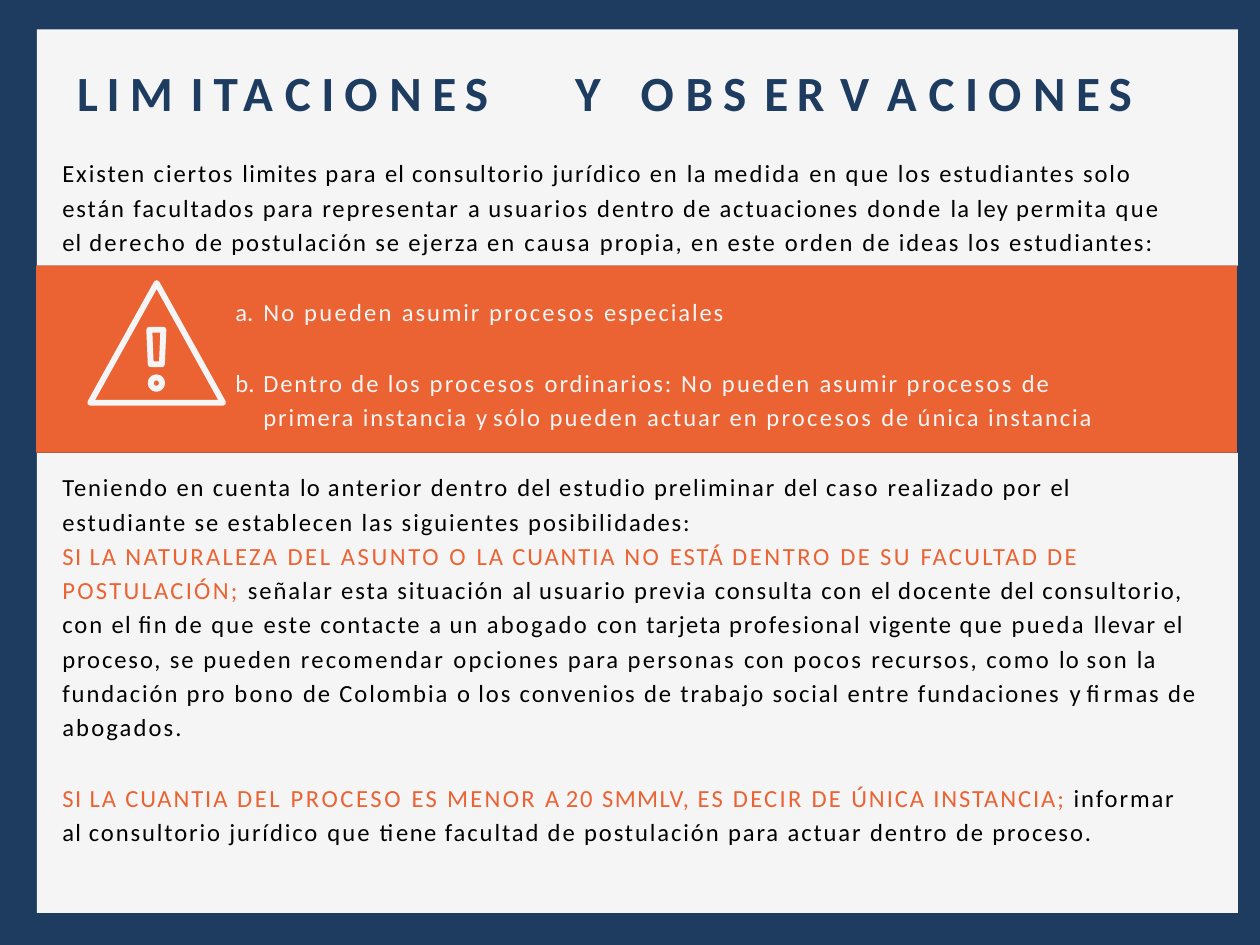
from itertools import groupby

from lxml import etree
from pptx import Presentation
from pptx.dml.color import RGBColor
from pptx.enum.shapes import MSO_SHAPE as SHAPE
from pptx.oxml.ns import qn
from pptx.util import Pt

NAVY, PAPER, ORANGE, BLACK = "1E3B60", "F5F5F5", "EB6333", "000000"


def color(hex_):
    return RGBColor.from_string(hex_)


def add_text(p, text, size=15, hex_=BLACK, bold=False, spc=1.1):
    r = p.add_run()
    r.text = text
    r.font.name = "Calibri"
    r.font.size = Pt(size)
    r.font.bold = bold
    r.font.color.rgb = color(hex_)
    r._r.get_or_add_rPr().set("spc", str(round(spc * 100)))


prs = Presentation()
prs.slide_width, prs.slide_height = Pt(768), Pt(576)
slide = prs.slides.add_slide(prs.slide_layouts[6])
shapes = slide.shapes

# Navy background, light panels and orange band
slide.background.fill.solid()
slide.background.fill.fore_color.rgb = color(NAVY)
for x, y, h, fill in [(22.5, 18, 144, PAPER), (22.5, 276, 280.5, PAPER),
                      (22, 162, 114, ORANGE)]:
    sp = shapes.add_shape(SHAPE.RECTANGLE, Pt(x), Pt(y), Pt(732), Pt(h))
    sp.shadow.inherit = False
    sp.fill.solid()
    sp.fill.fore_color.rgb = color(fill)
    sp.line.fill.background()

# Warning sign: triangle, dot and bar of the exclamation mark
triangle = shapes.add_shape(SHAPE.ISOSCELES_TRIANGLE, Pt(55), Pt(172.5), Pt(81), Pt(73))
dot = shapes.add_shape(SHAPE.OVAL, Pt(91.8), Pt(230), Pt(7), Pt(7))
fb = shapes.build_freeform(Pt(91), Pt(201), scale=1.0)
fb.add_line_segments([(Pt(99.6), Pt(201)), (Pt(98.7), Pt(222)), (Pt(91.9), Pt(222))])
bar = fb.convert_to_shape()
for sp in (triangle, dot, bar):
    sp.shadow.inherit = False
    sp.fill.background()
    sp.line.color.rgb = color(PAPER)
    sp.line.width = Pt(3.6)
    etree.SubElement(sp.line._get_or_add_ln(), qn("a:round"))

# Text boxes
frames = []
for x, y, w, h in [(47, 38, 681, 36), (37.5, 93.6, 708, 421)]:
    tf = shapes.add_textbox(Pt(x), Pt(y), Pt(w), Pt(h)).text_frame
    tf.word_wrap = True
    tf.margin_left = tf.margin_right = tf.margin_top = tf.margin_bottom = 0
    frames.append(tf)
title, body = frames

# Title: spaced letters, each with its own tracking
TRACKING = {"L": -1.4, "I": -0.7, "M": 2, "T": -3.6, "A": 0.2, "C": -0.4, "O": 0.2,
            "N": -0.4, "E": -1.6, "S": 2.1, "Y": 0.9, "B": -0.8, "R": 1.3, "V": 2}
p = title.paragraphs[0]
pPr = p._p.get_or_add_pPr()
tabs = etree.SubElement(pPr, qn("a:tabLst"))
for pos in (303.5, 343.5):
    etree.SubElement(tabs, qn("a:tab"), pos=str(Pt(pos)), algn="l")
words = "LIMITACIONES Y OBSERVACIONES".split()
for i, word in enumerate(words):
    for j, letter in enumerate(word):
        last = j == len(word) - 1
        gap = " " if not last else "\t" if i < len(words) - 1 else ""
        add_text(p, letter + gap, size=30, hex_=NAVY, bold=True, spc=TRACKING[letter])

# Tracking of the body words that differ from the usual 1.15
WORD_SPC = {w: spc for spc, group in {
    0.1: "y",
    0.3: "A",
    0.7: "el la lo al ley fin",
    0.85: "limites a o del tarjeta vigente llevar tiene SI SMMLV,",
    1.3: "medida que usuarios orden No opciones abogados.",
    1.4: "donde derecho causa pueden procesos caso abogado pueda recomendar personas "
         "pocos como son bono NATURALEZA DE FACULTAD POSTULACIÓN; ES MENOR DECIR",
    1.6: "DEL ASUNTO O NO DENTRO SU PROCESO",
}.items() for w in group.split()}

# Body: (is list item, lines), each line made of (text, colour) parts
PARAGRAPHS = [
    (False, [
        [("Existen ciertos limites para el consultorio jurídico en la medida en que los estudiantes solo", BLACK)],
        [("están facultados para representar a usuarios dentro de actuaciones donde la ley permita que", BLACK)],
        [("el derecho de postulación se ejerza en causa propia, en este orden de ideas los estudiantes:", BLACK)]]),
    (True, [
        [("No pueden asumir procesos especiales", PAPER)]]),
    (True, [
        [("Dentro de los procesos ordinarios: No pueden asumir procesos de", PAPER)],
        [("primera instancia y sólo pueden actuar en procesos de única instancia", PAPER)]]),
    (False, [
        [("Teniendo en cuenta lo anterior dentro del estudio preliminar del caso realizado por el", BLACK)],
        [("estudiante se establecen las siguientes posibilidades:", BLACK)],
        [("SI LA NATURALEZA DEL ASUNTO O LA CUANTIA NO ESTÁ DENTRO DE SU FACULTAD DE", ORANGE)],
        [("POSTULACIÓN; ", ORANGE),
         ("señalar esta situación al usuario previa consulta con el docente del consultorio,", BLACK)],
        [("con el fin de que este contacte a un abogado con tarjeta profesional vigente que pueda llevar el", BLACK)],
        [("proceso, se pueden recomendar opciones para personas con pocos recursos, como lo son la", BLACK)],
        [("fundación pro bono de Colombia o los convenios de trabajo social entre fundaciones y firmas de", BLACK)],
        [("abogados.", BLACK)]]),
    (False, [
        [("SI LA CUANTIA DEL PROCESO ES MENOR A 20 SMMLV, ES DECIR DE ÚNICA INSTANCIA; ", ORANGE),
         ("informar", BLACK)],
        [("al consultorio jurídico que tiene facultad de postulación para actuar dentro de proceso.", BLACK)]]),
]
for i, (is_item, lines) in enumerate(PARAGRAPHS):
    p = body.add_paragraph() if i else body.paragraphs[0]
    p.line_spacing = Pt(20.9)
    p.space_before = Pt(22 if i else 0)
    pPr = p._p.get_or_add_pPr()
    pPr.set("marL", str(Pt(123 if is_item else 0.5)))
    if is_item:
        pPr.set("indent", str(Pt(-17)))
        etree.SubElement(pPr, qn("a:buFont"), typeface="Calibri")
        etree.SubElement(pPr, qn("a:buAutoNum"), type="alphaLcPeriod")
    for n, line in enumerate(lines):
        if n:
            p.add_line_break()
        for text, hex_ in line:
            tail = " " if text.endswith(" ") else ""
            runs = [(spc, " ".join(group)) for spc, group in
                    groupby(text.split(), key=lambda w: WORD_SPC.get(w, 1.15))]
            for k, (spc, part) in enumerate(runs):
                gap = " " if k < len(runs) - 1 else tail
                add_text(p, part + gap, hex_=hex_, spc=spc)

prs.save("out.pptx")
